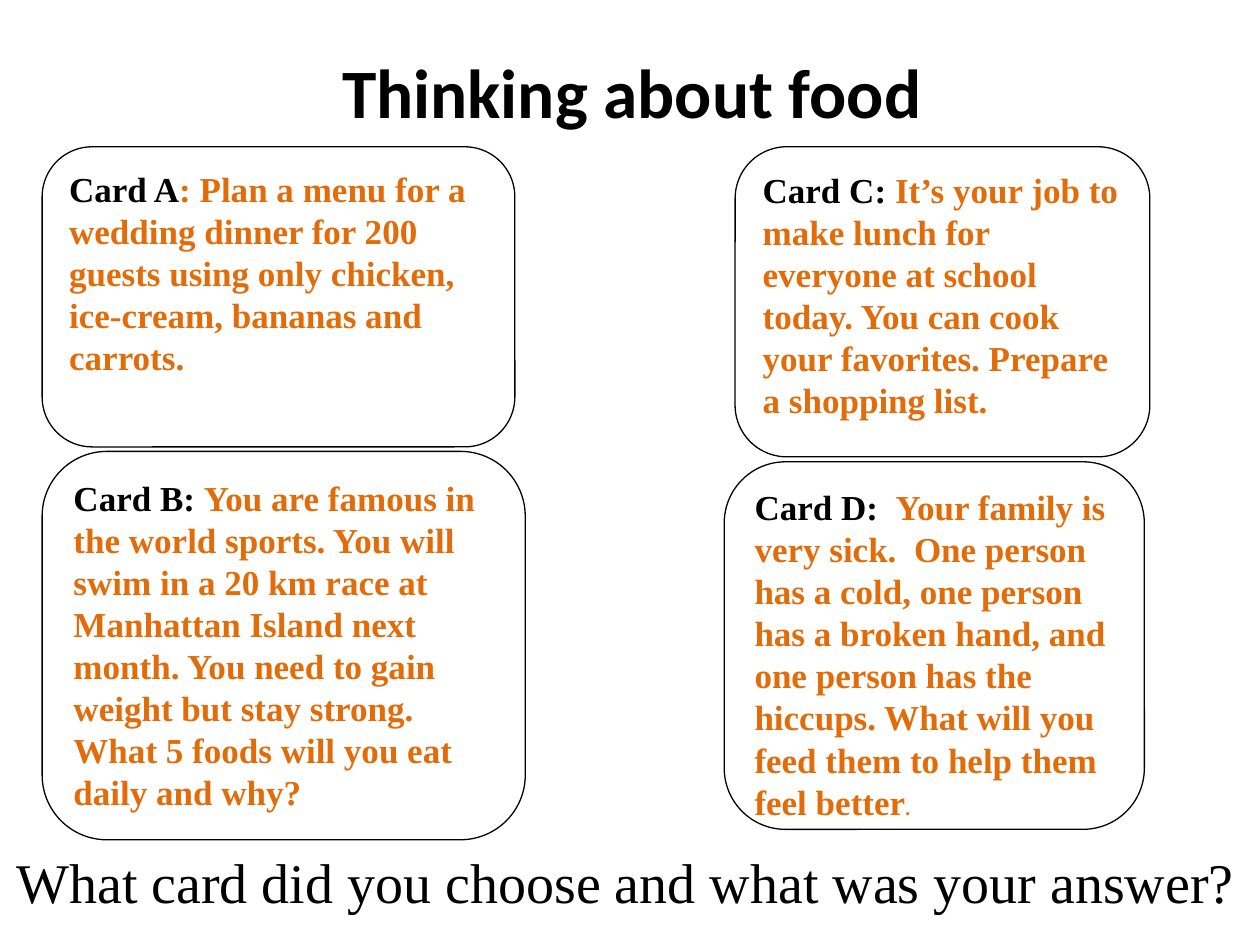
from pptx import Presentation
from pptx.dml.color import RGBColor
from pptx.enum.shapes import MSO_SHAPE as Shape
from pptx.enum.text import MSO_ANCHOR as Anchor, PP_ALIGN as Align
from pptx.util import Cm, Pt

BLACK, WHITE, ORANGE = "000000", "FFFFFF", "E36C0A"
SERIF, SANS = "Times New Roman", "Calibri"

TITLE = "Thinking about food "
QUESTION = "What card did you choose and what was your answer?"
CARDS = [
    ((0.85, 2.96, 9.53, 6.05), [
        ("Card A", BLACK, 20),
        (": Plan a menu for a wedding dinner for 200 guests using only chicken, "
         "ice-cream, bananas and carrots.", ORANGE, 20)]),
    ((0.85, 9.1, 9.74, 7.83), [
        ("Card B: ", BLACK, 20),
        ("You are famous in the world sports. You will swim in a 20 km race at "
         "Manhattan Island next month. You need to gain weight but stay strong. "
         "What 5 foods will you eat daily and why?", ORANGE, 20)]),
    ((14.82, 2.96, 8.36, 6.25), [
        ("Card C: ", BLACK, 20),
        ("It’s your job to make lunch for everyone at school today. You can cook "
         "your favorites. Prepare a shopping list.", ORANGE, 20)]),
    ((14.6, 9.31, 8.47, 7.41), [
        ("Card D:  ", BLACK, 20),
        ("Your family is very sick.  One person has a cold, one person has a "
         "broken hand, and one person has the hiccups. What will you feed them "
         "to help them feel better", ORANGE, 20),
        (".", ORANGE, 11)]),
]


def paint(color_format, color):
    color_format.rgb = RGBColor.from_string(color)


def style(span, font, size, color=BLACK, bold=False):
    span.font.name = font
    span.font.size = Pt(size)
    span.font.bold = bold
    paint(span.font.color, color)


def add_title(page):
    title = page.shapes.title
    title.left, title.top, title.width, title.height = map(Cm, (1.47, 0.84, 22.86, 1.98))
    title.text_frame.text = TITLE
    title.text_frame.vertical_anchor = Anchor.MIDDLE
    para = title.text_frame.paragraphs[0]
    para.alignment = Align.CENTER
    style(para.runs[0], SANS, 39.6, bold=True)


def add_card(page, area, parts):
    card = page.shapes.add_shape(Shape.ROUNDED_RECTANGLE, *map(Cm, area))
    card.shadow.inherit = False
    card.fill.solid()
    paint(card.fill.fore_color, WHITE)
    paint(card.line.color, BLACK)
    card.line.width = Pt(0.75)
    frame = card.text_frame
    frame.word_wrap = True
    frame.vertical_anchor = Anchor.TOP
    para = frame.paragraphs[0]
    para.alignment = Align.LEFT
    para.line_spacing = Pt(24)
    para.space_after = Pt(10)
    for text, color, size in parts:
        span = para.add_run()
        span.text = text
        style(span, SERIF, size, color, bold=True)


def add_question(page):
    box = page.shapes.add_textbox(*map(Cm, (0.08, 16.94, 25.32, 1.63)))
    frame = box.text_frame
    frame.text = QUESTION
    frame.word_wrap = False
    frame.vertical_anchor = Anchor.MIDDLE
    style(frame.paragraphs[0].runs[0], SERIF, 32)


def main():
    deck = Presentation()
    deck.slide_width, deck.slide_height = Cm(25.4), Cm(19.05)
    page = deck.slides.add_slide(deck.slide_layouts[5])
    add_title(page)
    for area, parts in CARDS:
        add_card(page, area, parts)
    add_question(page)
    deck.save("out.pptx")


if __name__ == "__main__":
    main()
